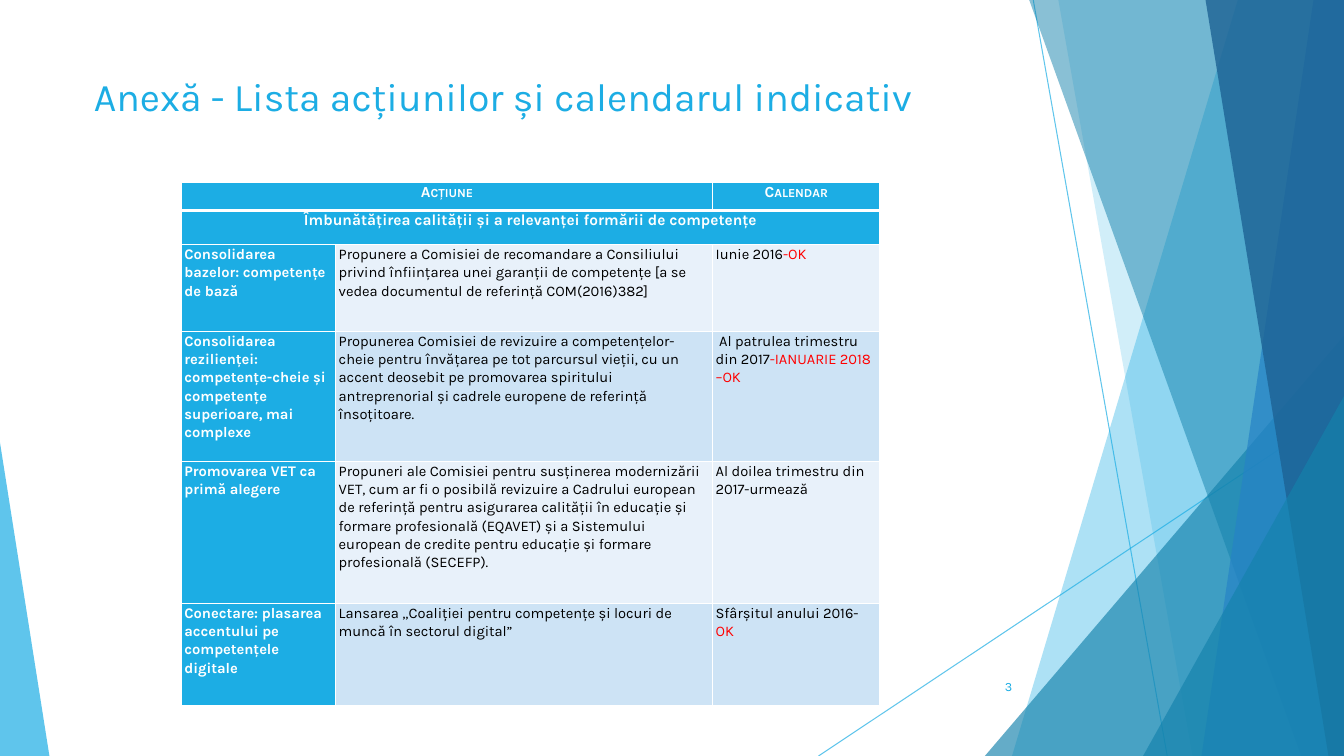
from dataclasses import dataclass

from lxml.etree import SubElement
from pptx import Presentation
from pptx.dml.color import RGBColor
from pptx.enum.shapes import MSO_CONNECTOR, MSO_SHAPE
from pptx.enum.text import MSO_ANCHOR, PP_ALIGN
from pptx.oxml import parse_xml
from pptx.oxml.ns import nsdecls, qn
from pptx.util import Inches, Pt


@dataclass(frozen=True)
class Theme:
    font: str = "Karla"
    accent: str = "1CADE4"
    teal: str = "1482AC"
    blue: str = "2683C6"
    navy: str = "1D6294"
    white: str = "FFFFFF"
    ink: str = "000000"
    status: str = "FF0000"
    light_row: str = "E8F1FA"
    dark_row: str = "CDE3F5"
    title_size: float = 28
    header_size: float = 11
    body_size: float = 10.5
    number_size: float = 9


@dataclass(frozen=True)
class Ray:
    start: tuple[float, float]
    end: tuple[float, float]


@dataclass(frozen=True)
class Band:
    top_x: float
    bottom_x: float
    color: str
    opacity: int


@dataclass(frozen=True)
class Wedge:
    left: float
    top: float
    width: float
    apex: float
    color: str
    opacity: int


@dataclass(frozen=True)
class Action:
    topic: str
    proposal: str
    due: str
    status: str = ""


THEME = Theme()
WIDTH, HEIGHT = Inches(13.333), Inches(7.5)

RAYS = [Ray((76.88, 0), (86.85, 100)), Ray((100, 53.73), (60.9, 100))]
FACETS = [
    Band(92.1, 75.3, THEME.accent, 36),
    Band(78.75, 88.73, THEME.accent, 20),
    Wedge(73.28, 44.4, 26.72, 1, THEME.teal, 66),
    Band(76.58, 96.83, THEME.teal, 50),
    Band(97.73, 89.4, THEME.blue, 70),
    Band(89.7, 98.85, THEME.navy, 80),
    Wedge(85.05, 52.4, 14.95, 1, THEME.teal, 66),
    Wedge(0, 58.53, 3.68, 0, THEME.accent, 70),
]

COLUMNS = [11.48, 28.05, 12.45]
ROWS = [3.73, 4.53, 11.47, 17.2, 18.8, 13.47]
ACTIONS = [
    Action("Consolidarea bazelor: competențe de bază",
           "Propunere a Comisiei de recomandare a Consiliului privind înființarea unei garanții "
           "de competențe [a se vedea documentul de referință COM(2016)382]",
           "Iunie 2016", "-OK"),
    Action("Consolidarea rezilienței: competențe-cheie și competențe superioare, mai complexe",
           "Propunerea Comisiei de revizuire a competențelor-cheie pentru învățarea pe tot "
           "parcursul vieții, cu un accent deosebit pe promovarea spiritului antreprenorial și "
           "cadrele europene de referință însoțitoare.",
           " Al patrulea trimestru din 2017", "-IANUARIE 2018 –OK"),
    Action("Promovarea VET ca primă alegere",
           "Propuneri ale Comisiei pentru susținerea modernizării VET, cum ar fi o posibilă "
           "revizuire a Cadrului european de referință pentru asigurarea calității în educație și "
           "formare profesională (EQAVET) și a Sistemului european de credite pentru educație și "
           "formare profesională (SECEFP).",
           "Al doilea trimestru din 2017-urmează"),
    Action("Conectare: plasarea accentului pe competențele digitale",
           "Lansarea „Coaliției pentru competențe și locuri de muncă în sectorul digital”",
           "Sfârșitul anului 2016-", "OK"),
]


def across(percent: float) -> int:
    return round(WIDTH * percent / 100)


def down(percent: float) -> int:
    return round(HEIGHT * percent / 100)


def set_opacity(shape, opacity: int) -> None:
    color = next(shape.element.spPr.iter(qn("a:srgbClr")))
    SubElement(color, qn("a:alpha")).set("val", str(opacity * 1000))


def write(paragraph, text: str, *, size: float, color: str, bold: bool = False,
          small_caps: bool = False, align=PP_ALIGN.LEFT) -> None:
    paragraph.alignment = align
    run = paragraph.add_run()
    run.text = text
    run.font.name = THEME.font
    run.font.size = Pt(size)
    run.font.bold = bold
    run.font.color.rgb = RGBColor.from_string(color)
    if small_caps:
        run.font._element.set("cap", "small")


def draw_ray(slide, ray: Ray) -> None:
    line = slide.shapes.add_connector(
        MSO_CONNECTOR.STRAIGHT, across(ray.start[0]), down(ray.start[1]),
        across(ray.end[0]), down(ray.end[1]))
    line.line.color.rgb = RGBColor.from_string(THEME.accent)
    line.line.width = Pt(0.75)
    set_opacity(line, 70)
    SubElement(line.element.spPr, qn("a:effectLst"))


def draw_facet(slide, facet: Band | Wedge) -> None:
    if isinstance(facet, Band):
        outline = slide.shapes.build_freeform(across(facet.top_x), 0)
        outline.add_line_segments([(WIDTH, 0), (WIDTH, HEIGHT), (across(facet.bottom_x), HEIGHT)])
        shape = outline.convert_to_shape()
    else:
        shape = slide.shapes.add_shape(
            MSO_SHAPE.ISOSCELES_TRIANGLE, across(facet.left), down(facet.top),
            across(facet.width), down(100 - facet.top))
        shape.adjustments[0] = facet.apex
    shape.shadow.inherit = False
    shape.line.fill.background()
    shape.fill.solid()
    shape.fill.fore_color.rgb = RGBColor.from_string(facet.color)
    set_opacity(shape, facet.opacity)


def add_label(slide, left: float, top: float, width: float, height: float, anchor):
    frame = slide.shapes.add_textbox(across(left), down(top), across(width), down(height)).text_frame
    frame.word_wrap = True
    frame.vertical_anchor = anchor
    return frame.paragraphs[0]


def style_cell(cell, fill: str, top: float = 1, bottom: float = 1) -> None:
    cell.margin_left = cell.margin_right = Inches(0.03)
    cell.margin_top = cell.margin_bottom = 0
    cell.fill.solid()
    cell.fill.fore_color.rgb = RGBColor.from_string(fill)
    edges = {"lnL": 1, "lnR": 1, "lnT": top, "lnB": bottom}
    for position, (edge, width) in enumerate(edges.items()):
        cell._tc.tcPr.insert(position, parse_xml(
            f'<a:{edge} {nsdecls("a")} w="{Pt(width)}"><a:solidFill>'
            f'<a:srgbClr val="{THEME.white}"/></a:solidFill></a:{edge}>'))
    paragraph = cell.text_frame.paragraphs[0]
    paragraph.line_spacing = 1.07
    paragraph.space_after = Pt(6)


def draw_calendar(slide) -> None:
    table = slide.shapes.add_table(
        len(ROWS), len(COLUMNS), across(13.5), down(24.13),
        across(sum(COLUMNS)), down(sum(ROWS))).table
    table.first_row = table.horz_banding = False
    for column, width in zip(table.columns, COLUMNS):
        column.width = across(width)
    for index, (row, height) in enumerate(zip(table.rows, ROWS)):
        row.height = down(height)
        stripe = THEME.dark_row if index % 2 else THEME.light_row
        for position, cell in enumerate(row.cells):
            style_cell(cell, THEME.accent if index < 2 or position == 0 else stripe,
                       top=3 if index == 1 else 1, bottom=3 if index == 0 else 1)
    table.cell(0, 0).merge(table.cell(0, 1))
    table.cell(1, 0).merge(table.cell(1, 2))

    headings = [(0, 0, "Acțiune", True), (0, 2, "Calendar", True),
                (1, 0, "Îmbunătățirea calității și a relevanței formării de competențe", False)]
    for row, column, text, small_caps in headings:
        write(table.cell(row, column).text_frame.paragraphs[0], text, size=THEME.header_size,
              color=THEME.white, bold=True, small_caps=small_caps, align=PP_ALIGN.CENTER)

    for index, action in enumerate(ACTIONS, start=2):
        topic, proposal, due = (cell.text_frame.paragraphs[0] for cell in table.rows[index].cells)
        write(topic, action.topic, size=THEME.body_size, color=THEME.white, bold=True)
        write(proposal, action.proposal, size=THEME.body_size, color=THEME.ink)
        write(due, action.due, size=THEME.body_size, color=THEME.ink)
        if action.status:
            write(due, action.status, size=THEME.body_size, color=THEME.status)


def main() -> None:
    deck = Presentation()
    deck.slide_width, deck.slide_height = WIDTH, HEIGHT
    slide = deck.slides.add_slide(deck.slide_layouts[6])
    for ray in RAYS:
        draw_ray(slide, ray)
    for facet in FACETS:
        draw_facet(slide, facet)
    write(add_label(slide, 5.55, 8.93, 70.5, 13.87, MSO_ANCHOR.TOP),
          " Anexă - Lista acțiunilor și calendarul indicativ",
          size=THEME.title_size, color=THEME.accent)
    draw_calendar(slide)
    write(add_label(slide, 70.43, 88.13, 5.63, 5.33, MSO_ANCHOR.MIDDLE), "3",
          size=THEME.number_size, color=THEME.accent, align=PP_ALIGN.RIGHT)
    deck.save("out.pptx")


if __name__ == "__main__":
    main()
